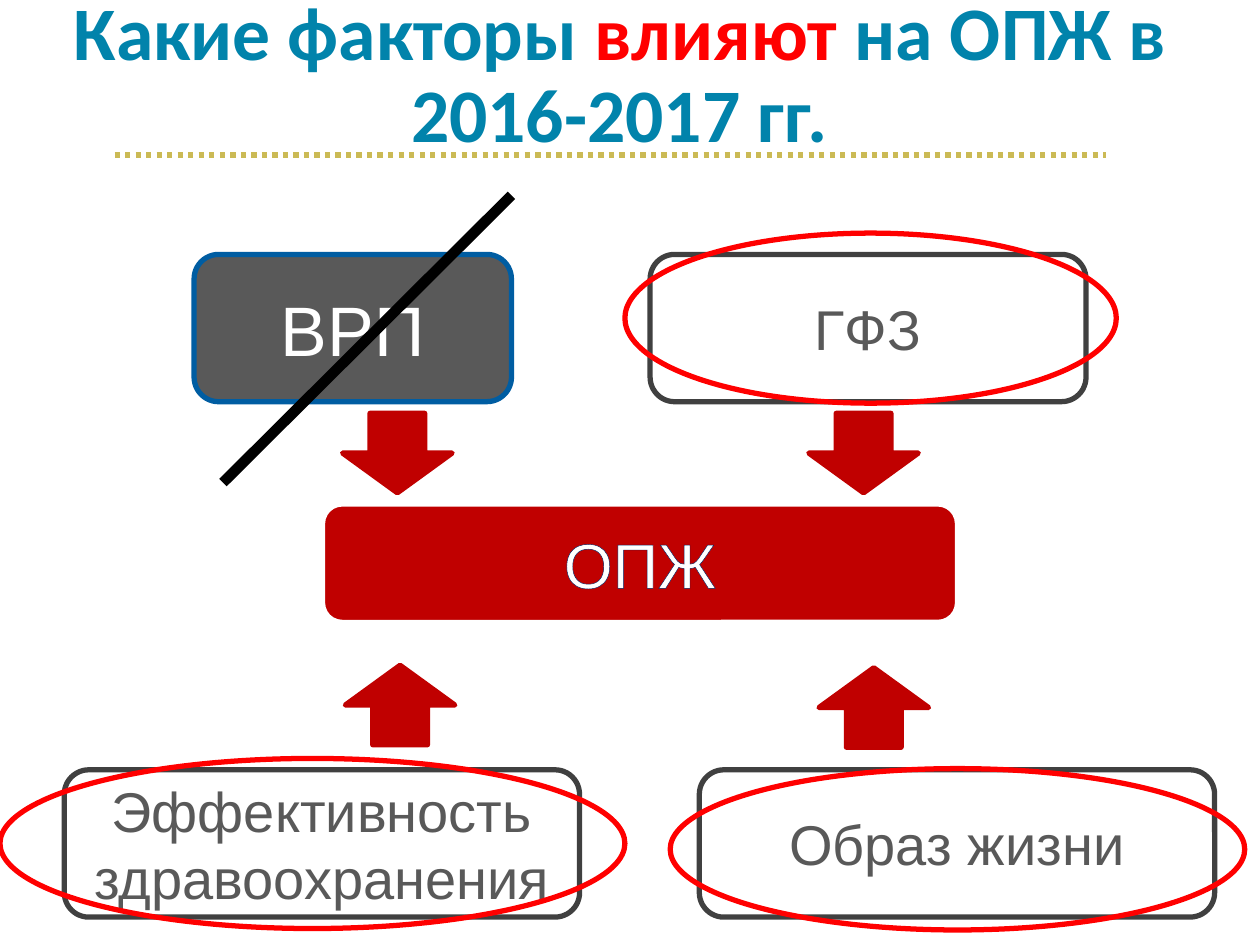
from lxml.etree import SubElement
from pptx import Presentation
from pptx.dml.color import RGBColor
from pptx.enum.dml import MSO_LINE
from pptx.enum.shapes import MSO_CONNECTOR, MSO_SHAPE
from pptx.enum.text import MSO_ANCHOR, MSO_AUTO_SIZE, PP_ALIGN
from pptx.oxml import parse_xml
from pptx.oxml.ns import nsdecls, qn
from pptx.util import Pt

COLORS = {
    "title": "0183AB", "accent": "FF0000", "rule": "CBBA55",
    "red": "C00000", "gray": "595959", "dark": "404040",
    "blue": "005DA2", "navy": "002060", "white": "FFFFFF", "black": "000000",
}


def add_figure(kind, bounds, fill, line, text="", size=32, color="gray"):
    figure = page.shapes.add_shape(kind, *[Pt(value) for value in bounds])
    figure.shadow.inherit = False
    if fill:
        figure.fill.solid()
        figure.fill.fore_color.rgb = RGBColor.from_string(COLORS[fill])
    else:
        figure.fill.background()
    figure.line.color.rgb = RGBColor.from_string(COLORS[line])
    figure.line.width = Pt(3)
    if text:
        frame = figure.text_frame
        frame.text = text
        frame.word_wrap = True
        frame.vertical_anchor = MSO_ANCHOR.MIDDLE
        para = frame.paragraphs[0]
        para.alignment = PP_ALIGN.CENTER
        font = para.runs[0].font
        font.name = "Arial"
        font.size = Pt(size)
        font.color.rgb = RGBColor.from_string(COLORS[color])
    return figure


def add_line(ends, color, width):
    line = page.shapes.add_connector(MSO_CONNECTOR.STRAIGHT, *[Pt(value) for value in ends])
    line.line.color.rgb = RGBColor.from_string(COLORS[color])
    line.line.width = Pt(width)
    SubElement(line._element.spPr, qn("a:effectLst"))
    return line


deck = Presentation()
deck.slide_width, deck.slide_height = Pt(720), Pt(540)
page = deck.slides.add_slide(deck.slide_layouts[5])

title = page.shapes.title
title.left, title.top, title.width, title.height = Pt(14.4), Pt(15.1), Pt(694.1), Pt(79.2)
frame = title.text_frame
frame.word_wrap = True
frame.auto_size = MSO_AUTO_SIZE.NONE
frame.vertical_anchor = MSO_ANCHOR.BOTTOM
frame.margin_left = frame.margin_top = frame.margin_bottom = Pt(3.6)
frame.margin_right = Pt(18)
para = frame.paragraphs[0]
para.alignment = PP_ALIGN.CENTER
para.line_spacing = 0.9
for text, color in [("Какие факторы ", "title"), ("влияют", "accent"),
                    (" на ОПЖ в 2016-2017 гг.", "title")]:
    span = para.add_run()
    span.text = text
    span.font.name = "Calibri"
    span.font.size = Pt(43.2)
    span.font.bold = True
    span.font.color.rgb = RGBColor.from_string(COLORS[color])

rule = add_line((65.5, 88.6, 632.2, 88.6), "rule", 3)
rule.line.dash_style = MSO_LINE.ROUND_DOT

outcome = add_figure(MSO_SHAPE.ROUNDED_RECTANGLE, (184.3, 288, 362.9, 67.7),
                     "red", "white", "ОПЖ", 36, "white")
span = outcome.text_frame.paragraphs[0].runs[0]
outline = parse_xml(
    f'<a:ln {nsdecls("a")} w="9525"><a:solidFill>'
    f'<a:srgbClr val="{COLORS["navy"]}"/></a:solidFill></a:ln>'
)
span.font._element.insert(0, outline)

for left, top, rotation in [(195.8, 236.2, 0), (462.2, 236.2, 0),
                            (197.3, 380.2, 180), (468, 381.6, 180)]:
    arrow = add_figure(MSO_SHAPE.DOWN_ARROW, (left, top, 62.6, 45.4), "red", "red")
    arrow.rotation = rotation

for text, left, top, width, fill, line, size, color in [
    ("ВРП", 110.9, 145.4, 181.4, "gray", "blue", 40, "white"),
    ("ГФЗ", 371.5, 145.4, 249.1, None, "dark", 32, "gray"),
    ("Эффективность здравоохранения", 36.7, 439.9, 294.5, None, "dark", 32, "gray"),
    ("Образ жизни", 399.6, 439.9, 294.5, None, "dark", 32, "gray"),
]:
    add_figure(MSO_SHAPE.ROUNDED_RECTANGLE, (left, top, width, 84.2),
               fill, line, text, size, color)

add_line((292.3, 111.6, 127.4, 275.8), "black", 6)

for bounds in [(357.1, 133.2, 280.8, 97.2), (383, 439.2, 328.3, 92.2),
               (0, 433.4, 357.1, 97.2)]:
    add_figure(MSO_SHAPE.OVAL, bounds, None, "accent")

deck.save("out.pptx")
